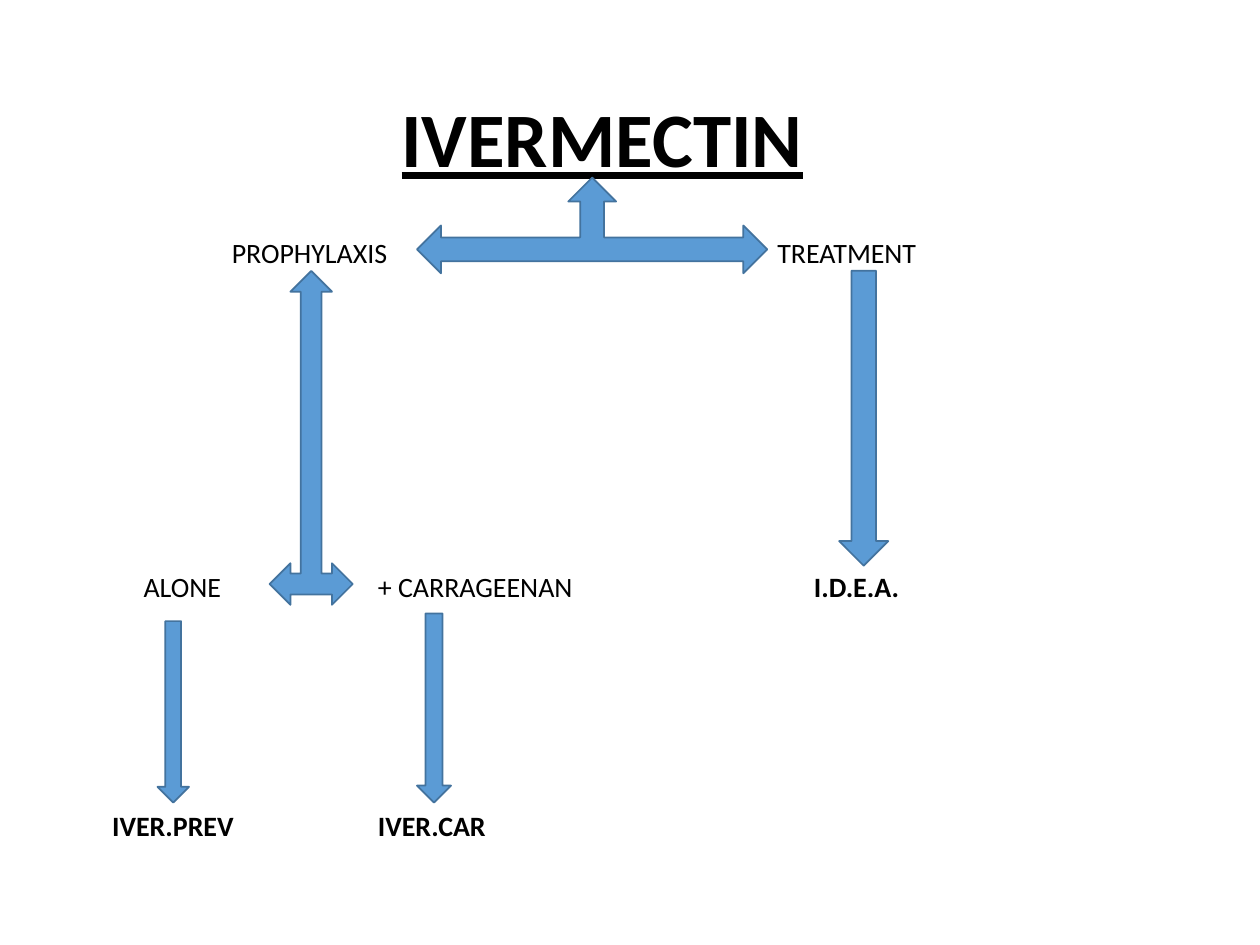
from pptx import Presentation
from pptx.dml.color import RGBColor
from pptx.enum import shapes, text
from pptx.util import Inches, Pt

BLACK = RGBColor(0x00, 0x00, 0x00)
BLUE = RGBColor(0x5B, 0x9B, 0xD5)
DARK_BLUE = RGBColor(0x43, 0x73, 0x9E)
DOWN = shapes.MSO_SHAPE.DOWN_ARROW
BRANCH = shapes.MSO_SHAPE.LEFT_RIGHT_UP_ARROW


def add_text(page, words, left, top, width, height, size=16, bold=False,
             underline=False, align=text.PP_ALIGN.LEFT):
    """Add one line of text, centred vertically in its box."""
    box = page.shapes.add_textbox(Inches(left), Inches(top), Inches(width), Inches(height))
    frame = box.text_frame
    frame.word_wrap = True
    frame.vertical_anchor = text.MSO_ANCHOR.MIDDLE
    frame.margin_left = frame.margin_right = frame.margin_top = frame.margin_bottom = 0
    para = frame.paragraphs[0]
    para.alignment = align
    para.line_spacing = 0.9
    span = para.add_run()
    span.text = words
    span.font.name = "Calibri"
    span.font.size = Pt(size)
    span.font.bold = bold
    span.font.underline = underline
    span.font.color.rgb = BLACK


def add_arrow(page, kind, left, top, width, height):
    """Add one outlined block arrow."""
    arrow = page.shapes.add_shape(kind, Inches(left), Inches(top), Inches(width), Inches(height))
    arrow.shadow.inherit = False
    arrow.fill.solid()
    arrow.fill.fore_color.rgb = BLUE
    arrow.line.color.rgb = DARK_BLUE
    arrow.line.width = Pt(1)


def add_title(page, left, top, width, height):
    """Place the underlined heading."""
    add_text(page, "IVERMECTIN", left, top, width, height, size=44, bold=True,
             underline=True, align=text.PP_ALIGN.CENTER)


def add_labels(page, left, top):
    """Place the three levels of branch names."""
    levels = [
        (0, [("PROPHYLAXIS", 1.7, False), ("TREATMENT", 6.03, False)]),
        (2.65, [("ALONE", 1, False), ("+ CARRAGEENAN", 2.86, False), ("I.D.E.A.", 6.32, True)]),
        (4.55, [("IVER.PREV", 0.75, True), ("IVER.CAR", 2.86, True)]),
    ]
    for drop, labels in levels:
        for words, indent, bold in labels:
            add_text(page, words, left + indent, top + drop, 1.8, 0.3, bold=bold)


def add_arrows(page, left, top):
    """Place the arrows that join the levels."""
    for kind, across, drop, width, height in [
        (BRANCH, 2.06, 0, 2.78, 0.76),
        (DOWN, 5.41, 0.74, 0.39, 2.34),
        (BRANCH, 0.89, 0.74, 0.66, 2.65),
        (DOWN, 0, 3.52, 0.25, 1.44),
        (DOWN, 2.06, 3.46, 0.27, 1.5),
    ]:
        add_arrow(page, kind, left + across, top + drop, width, height)


def main():
    """Build the treatment tree slide."""
    deck = Presentation()
    deck.slide_width = Inches(10)
    deck.slide_height = Inches(7.5)
    page = deck.slides.add_slide(deck.slide_layouts[6])
    add_title(page, 0.47, 0.41, 8.62, 1.45)
    add_labels(page, 0.14, 1.87)
    add_arrows(page, 1.25, 1.41)
    deck.save("out.pptx")


if __name__ == "__main__":
    main()
